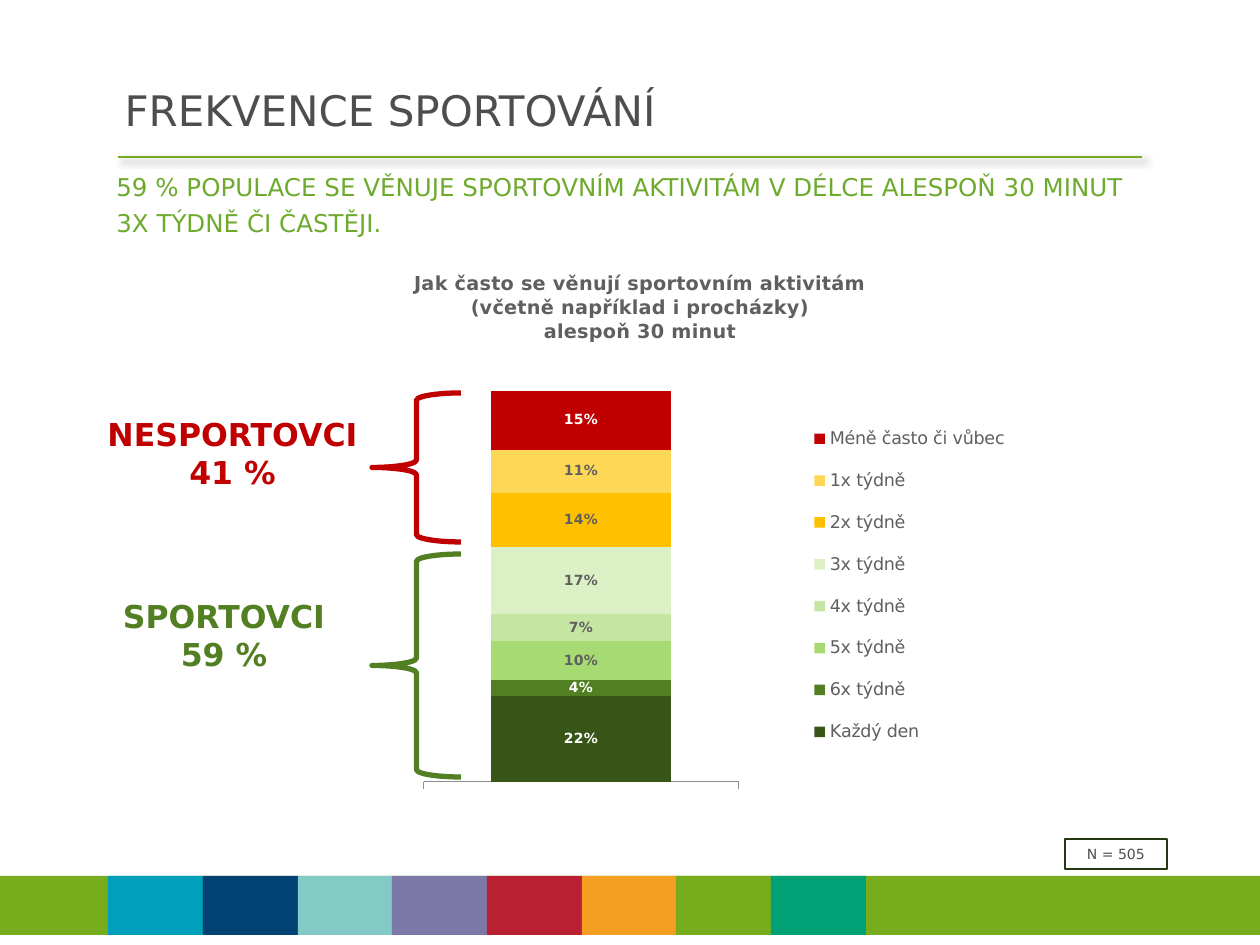
from lxml import etree
from pptx import Presentation
from pptx import util as u
from pptx.chart.data import CategoryChartData
from pptx.dml.color import RGBColor
from pptx.enum import chart as charts, shapes, text
from pptx.oxml import parse_xml
from pptx.oxml.ns import nsdecls, qn

FONT = "DejaVu Sans"
PX_PER_INCH = 126
COLORS = {
    "title": "4E4E4E", "subtitle": "6EAA2E", "chart_text": "5F5F5F",
    "white": "FFFFFF", "axis": "8C8C8C", "border": "24380F",
    "green": "77AD1C", "inactive": "C00000", "active": "527F22",
}
BANDS = ["009FBB", "004272", "83C9C6", "7C78A8",
         "B92032", "F49F22", "77AD1C", "00A275"]
FREQUENCIES = [
    ("Každý den", 0.22, "375517", "white"),
    ("6x týdně", 0.04, "527F22", "white"),
    ("5x týdně", 0.10, "A8DA73", "chart_text"),
    ("4x týdně", 0.07, "C5E6A2", "chart_text"),
    ("3x týdně", 0.17, "DBF0C5", "chart_text"),
    ("2x týdně", 0.14, "FFC000", "chart_text"),
    ("1x týdně", 0.11, "FFD757", "chart_text"),
    ("Méně často či vůbec", 0.15, "C00000", "white"),
]


def px(value):
    return u.Inches(value / PX_PER_INCH)


def box(left, top, width, height):
    return px(left), px(top), px(width), px(height)


def rgb(name):
    return RGBColor.from_string(COLORS.get(name, name))


def format_font(font, size, color, bold=False):
    font.name = FONT
    font.size = u.Pt(size)
    font.bold = bold
    font.color.rgb = rgb(color)


def write(frame, content, size, color, bold=False, wrap=True,
          align=text.PP_ALIGN.LEFT, anchor=text.MSO_ANCHOR.TOP, gap=0):
    frame.word_wrap = wrap
    frame.vertical_anchor = anchor
    for index, line in enumerate(content.split("\n")):
        paragraph = frame.add_paragraph() if index else frame.paragraphs[0]
        paragraph.alignment = align
        if index and gap:
            paragraph.space_before = u.Pt(gap)
        run = paragraph.add_run()
        run.text = line
        format_font(run.font, size, color, bold)


def add_text(slide, bounds, content, **style):
    shape = slide.shapes.add_textbox(*box(*bounds))
    write(shape.text_frame, content, **style)


def add_shape(slide, kind, bounds, fill=None, line=None, weight=0.75):
    shape = slide.shapes.add_shape(kind, *box(*bounds))
    shape.shadow.inherit = False
    if fill:
        shape.fill.solid()
        shape.fill.fore_color.rgb = rgb(fill)
    else:
        shape.fill.background()
    if line:
        shape.line.color.rgb = rgb(line)
        shape.line.width = u.Pt(weight)
    else:
        shape.line.fill.background()
    return shape


def add_rule(slide, left, right, top):
    rule = slide.shapes.add_connector(
        shapes.MSO_CONNECTOR.STRAIGHT, px(left), px(top), px(right), px(top))
    rule.line.color.rgb = rgb("green")
    rule.line.width = u.Pt(0.75)
    rule._element.spPr.append(parse_xml(
        f'<a:effectLst {nsdecls("a")}>'
        f'<a:outerShdw blurRad="{u.Pt(4)}" dist="{u.Pt(3)}" dir="2700000">'
        '<a:srgbClr val="000000"><a:alpha val="40000"/></a:srgbClr>'
        '</a:outerShdw></a:effectLst>'))


def add_footer_bands(slide):
    rectangle = shapes.MSO_SHAPE.RECTANGLE
    add_shape(slide, rectangle, (0, 876, 1260, 59), "green")
    edges = [round(108 + 94.75 * index) for index in range(len(BANDS) + 1)]
    for color, left, right in zip(BANDS, edges, edges[1:]):
        add_shape(slide, rectangle, (left, 876, right - left, 59), color)


def place(element, target=None, **position):
    layout = element.find(qn("c:layout"))
    if layout is not None:
        element.remove(layout)
    layout = parse_xml(f'<c:layout {nsdecls("c")}><c:manualLayout/></c:layout>')
    values = {"layoutTarget": target} if target else {}
    values.update(xMode="edge", yMode="edge", **position)
    for tag, value in values.items():
        etree.SubElement(layout[0], qn(f"c:{tag}")).set("val", str(value))
    overlay = element.find(qn("c:overlay"))
    if overlay is None:
        element.insert(0, layout)
    else:
        overlay.addprevious(layout)


def add_frequency_chart(slide):
    data = CategoryChartData(number_format="0%")
    data.categories = ["1"]
    for name, value, *_ in FREQUENCIES:
        data.add_series(name, [value])
    chart = slide.shapes.add_chart(
        charts.XL_CHART_TYPE.COLUMN_STACKED, *box(397, 231, 670, 586), data).chart
    format_font(chart.font, 18, "chart_text")

    write(chart.chart_title.text_frame,
          "Jak často se věnují sportovním aktivitám\n"
          "(včetně například i procházky)\nalespoň 30 minut",
          size=11, color="chart_text", bold=True, align=text.PP_ALIGN.CENTER)
    place(chart.chart_title.element, x=0.02, y=0.06)

    chart.has_legend = True
    chart.legend.position = charts.XL_LEGEND_POSITION.RIGHT
    chart.legend.include_in_layout = False
    format_font(chart.legend.font, 10, "chart_text")
    place(chart.legend._element, x=0.6, y=0.3, w=0.33, h=0.61)
    place(chart._chartSpace.chart.plotArea, "inner",
          x=0.04, y=0.14, w=0.47, h=0.8)

    chart.value_axis.minimum_scale = 0
    chart.value_axis.maximum_scale = 1.2
    chart.value_axis.has_major_gridlines = False
    chart.value_axis.visible = False
    axis = chart.category_axis
    axis.tick_label_position = charts.XL_TICK_LABEL_POSITION.NONE
    axis.major_tick_mark = charts.XL_TICK_MARK.OUTSIDE
    axis.format.line.color.rgb = rgb("axis")
    axis.format.line.width = u.Pt(0.75)

    plot = chart.plots[0]
    plot.gap_width = 75
    plot.overlap = 100
    plot.vary_by_categories = False
    for series, (_, _, color, label_color) in zip(plot.series, FREQUENCIES):
        series.format.fill.solid()
        series.format.fill.fore_color.rgb = rgb(color)
        labels = series.data_labels
        labels.show_value = True
        labels.number_format = "0%"
        labels.number_format_is_linked = False
        labels.position = charts.XL_LABEL_POSITION.CENTER
        format_font(labels.font, 8, label_color, True)


def add_group(slide, content, color, label_bounds, brace_bounds):
    add_shape(slide, shapes.MSO_SHAPE.LEFT_BRACE, brace_bounds,
              line=color, weight=3)
    add_text(slide, label_bounds, content, size=18, color=color, bold=True,
             wrap=False, align=text.PP_ALIGN.CENTER)


def main():
    presentation = Presentation()
    presentation.slide_width = px(1260)
    presentation.slide_height = px(945)
    slide = presentation.slides.add_slide(presentation.slide_layouts[5])

    add_rule(slide, 118, 1142, 157)
    add_footer_bands(slide)

    title = slide.shapes.title
    title.left, title.top, title.width, title.height = box(112, 78, 1118, 64)
    write(title.text_frame, "FREKVENCE SPORTOVÁNÍ", size=24, color="title",
          anchor=text.MSO_ANCHOR.MIDDLE)
    add_text(slide, (104, 166, 1111, 100),
             "59 % POPULACE SE VĚNUJE SPORTOVNÍM AKTIVITÁM V DÉLCE ALESPOŇ 30 MINUT\n"
             "3X TÝDNĚ ČI ČASTĚJI.", size=14, color="subtitle", gap=3.5)

    sample = add_shape(slide, shapes.MSO_SHAPE.RECTANGLE, (1065, 839, 102, 30),
                       line="border")
    write(sample.text_frame, "N = 505", size=8, color="title",
          align=text.PP_ALIGN.CENTER, anchor=text.MSO_ANCHOR.MIDDLE)

    add_frequency_chart(slide)
    add_group(slide, "NESPORTOVCI\n41 %", "inactive",
              (89, 409, 287, 127), (372, 393, 89, 149))
    add_group(slide, "SPORTOVCI\n59 %", "active",
              (105, 591, 238, 127), (372, 554, 89, 223))

    presentation.save("out.pptx")


if __name__ == "__main__":
    main()
